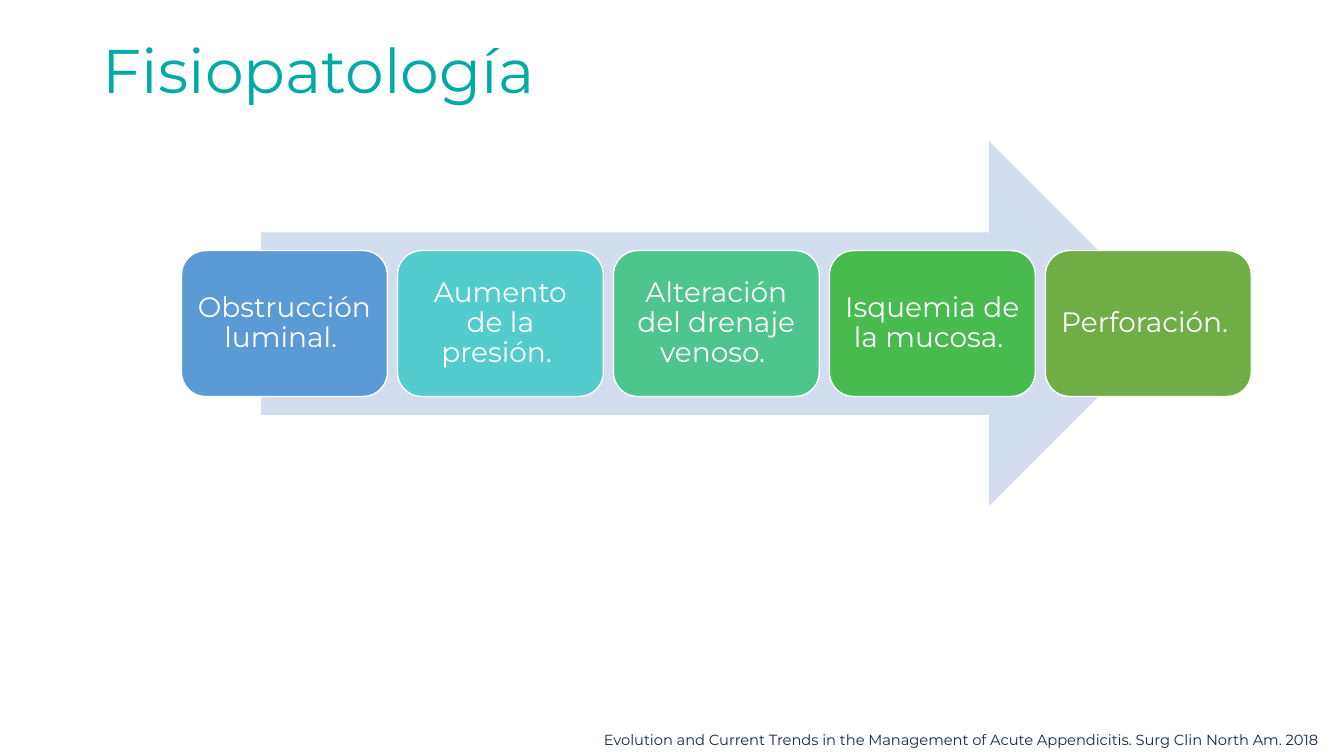
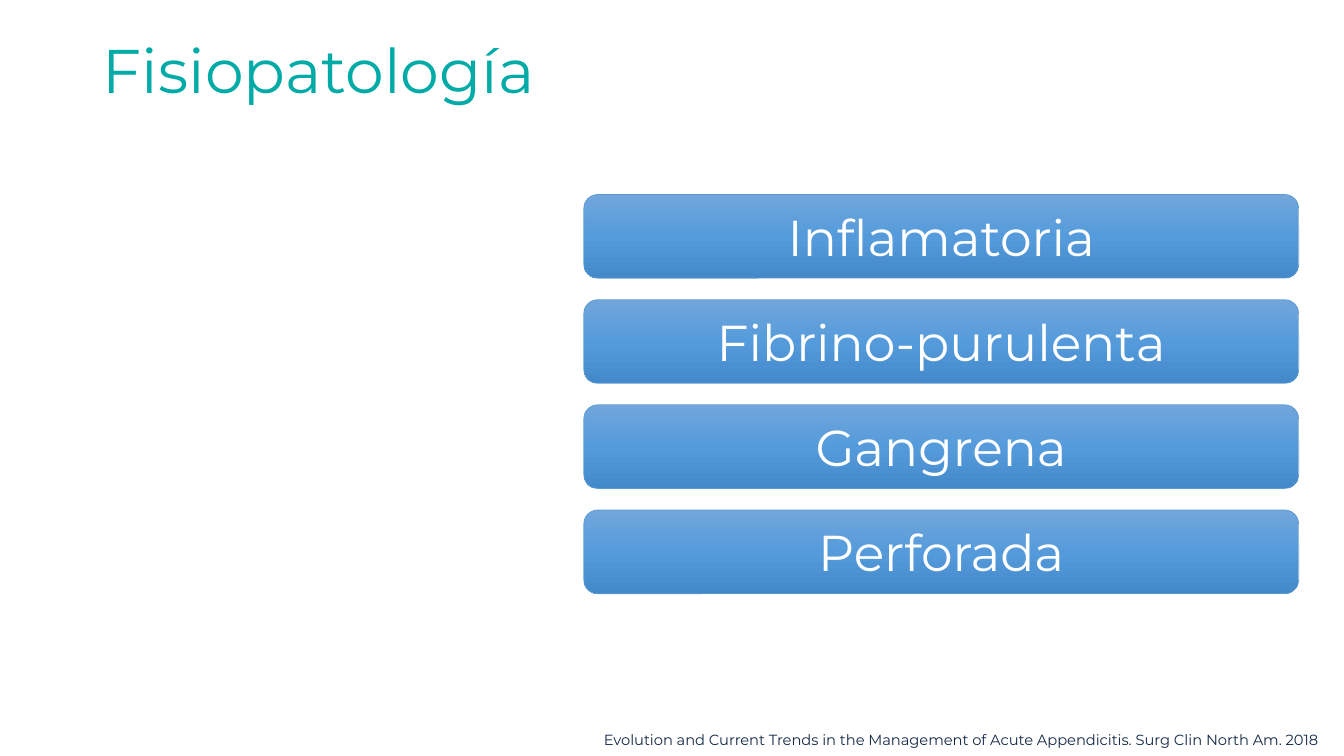
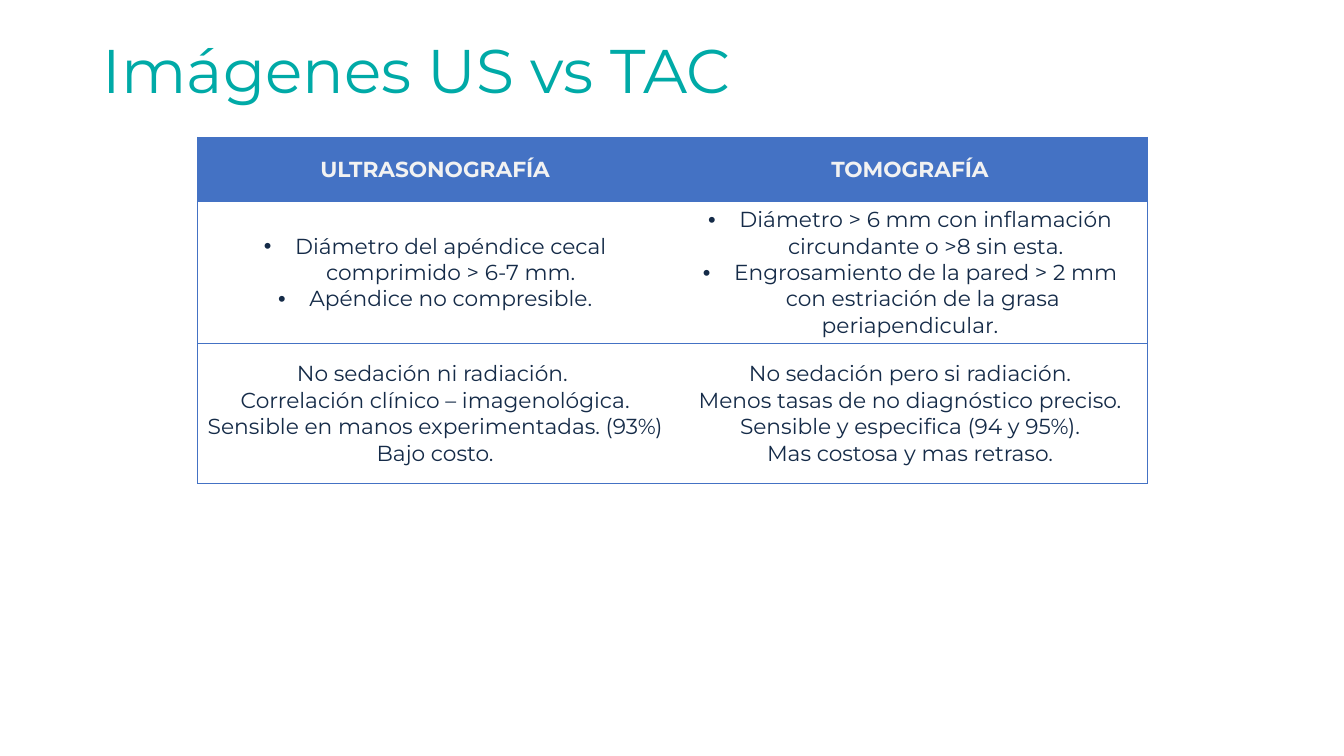
from copy import deepcopy

from lxml import etree
from pptx import Presentation
from pptx.dml.color import RGBColor
from pptx.enum.shapes import MSO_SHAPE
from pptx.enum.text import MSO_ANCHOR, MSO_AUTO_SIZE, PP_ALIGN
from pptx.oxml.ns import qn
from pptx.util import Inches, Pt

ROUNDED = MSO_SHAPE.ROUNDED_RECTANGLE
RIGHT_ARROW = MSO_SHAPE.RIGHT_ARROW
MIDDLE = MSO_ANCHOR.MIDDLE
LEFT, CENTER = PP_ALIGN.LEFT, PP_ALIGN.CENTER
NO_AUTOFIT = MSO_AUTO_SIZE.NONE
TITLE_ONLY = 5
FONT = "Montserrat"
COLORS = {
    "title": "00AAA7",
    "ink": "152B48",
    "white": "FFFFFF",
    "arrow": "D2DEEF",
    "bar_line": "5B9BD5",
    "table": "4472C4",
    "table_head": "F2F2F2",
}
BAR_GRADIENT = [(0, "71A6DB"), (0.5, "559BDB"), (1, "448ACA")]
CITATION = ("Evolution and Current Trends in the Management of Acute "
            "Appendicitis. Surg Clin North Am. 2018")
STEPS = [
    ("Obstrucción luminal. ", "5B9BD5"),
    ("Aumento de la presión. ", "54CCCD"),
    ("Alteración del drenaje venoso. ", "4DC58D"),
    ("Isquemia de la mucosa. ", "48BB4F"),
    ("Perforación. ", "70AD47"),
]
STAGES = ["Inflamatoria", "Fibrino-purulenta", "Gangrena", "Perforada"]
BULLET = "• "
COMPARISON = [
    [["ULTRASONOGRAFÍA"], ["TOMOGRAFÍA"]],
    [
        ["• Diámetro del apéndice cecal comprimido > 6-7 mm.",
         "• Apéndice no compresible."],
        ["• Diámetro > 6 mm con inflamación circundante o >8 sin esta.",
         "• Engrosamiento de la pared > 2 mm con estriación de la grasa ",
         "periapendicular."],
    ],
    [
        ["No sedación ni radiación. ",
         "Correlación clínico – imagenológica.",
         "Sensible en manos experimentadas. (93%)",
         "Bajo costo."],
        ["No sedación pero si radiación.",
         "Menos tasas de no diagnóstico preciso.",
         "Sensible y especifica (94 y 95%).",
         "Mas costosa y mas retraso."],
    ],
]


def rgb(value):
    return RGBColor.from_string(value)


def place(part, left, top, width, height):
    part.left, part.top = Inches(left), Inches(top)
    part.width, part.height = Inches(width), Inches(height)


def format_text(frame, size, color, align=LEFT, spacing=None, bold=False):
    for paragraph in frame.paragraphs:
        paragraph.alignment = align
        if spacing:
            paragraph.line_spacing = spacing
        for run in paragraph.runs:
            run.font.name = FONT
            run.font.size = Pt(size)
            run.font.bold = bold
            run.font.color.rgb = rgb(color)


def add_titled_slide(deck, heading):
    slide = deck.slides.add_slide(deck.slide_layouts[TITLE_ONLY])
    title = slide.shapes.title
    place(title, 0.92, 0, 11.5, 1.45)
    frame = title.text_frame
    frame.text = heading
    frame.auto_size = NO_AUTOFIT
    frame.vertical_anchor = MIDDLE
    format_text(frame, 44, COLORS["title"], spacing=0.9)
    return slide


def add_citation(slide):
    citation = slide.shapes.add_textbox(
        Inches(5.89), Inches(7.2), Inches(7.78), Inches(0.3))
    frame = citation.text_frame
    frame.word_wrap = True
    frame.text = CITATION
    format_text(frame, 10.5, COLORS["ink"])


def add_block(slide, preset, left, top, width, height, fill=None):
    block = slide.shapes.add_shape(
        preset, Inches(left), Inches(top), Inches(width), Inches(height))
    block.shadow.inherit = False
    block.line.fill.background()
    if fill:
        block.fill.solid()
        block.fill.fore_color.rgb = rgb(fill)
    return block


def set_outline(block, color, weight):
    block.line.color.rgb = rgb(color)
    block.line.width = Pt(weight)


def label(block, text, size, spacing=None):
    frame = block.text_frame
    frame.word_wrap = True
    frame.vertical_anchor = MIDDLE
    frame.text = text
    format_text(frame, size, COLORS["white"], CENTER, spacing)


def fill_gradient(block, stops):
    block.fill.gradient()
    block.fill.gradient_angle = 270
    stop_list = block._element.spPr.find(qn("a:gradFill")).find(qn("a:gsLst"))
    while len(stop_list) < len(stops):
        stop_list.append(deepcopy(stop_list[0]))
    for stop, (position, color) in zip(block.fill.gradient_stops, stops):
        stop.position = position
        stop.color.rgb = rgb(color)


def add_process(slide, left, top, width, height):
    add_block(slide, RIGHT_ARROW, left + 0.79, top, width - 1.58, height,
              COLORS["arrow"])
    gap = 0.1
    step_width = (width - gap * (len(STEPS) - 1)) / len(STEPS)
    step_height = height * 0.4
    step_top = top + (height - step_height) / 2
    for index, (text, color) in enumerate(STEPS):
        step = add_block(slide, ROUNDED, left + index * (step_width + gap),
                         step_top, step_width, step_height, color)
        set_outline(step, COLORS["white"], 1)
        frame = step.text_frame
        frame.margin_left = frame.margin_right = Inches(0.08)
        frame.margin_top = frame.margin_bottom = Inches(0.08)
        label(step, text, 20, 0.9)


def add_stages(slide, left, top, width, height):
    bar_height = 0.83
    pitch = (height - bar_height) / (len(STAGES) - 1)
    for index, text in enumerate(STAGES):
        bar = add_block(slide, ROUNDED, left, top + index * pitch,
                        width, bar_height)
        fill_gradient(bar, BAR_GRADIENT)
        set_outline(bar, COLORS["bar_line"], 0.5)
        label(bar, text, 36)


def set_borders(cell, visible):
    properties = cell._tc.get_or_add_tcPr()
    for side in "LRTB":
        edge = etree.SubElement(properties, qn(f"a:ln{side}"))
        edge.set("w", str(Pt(0.5)))
        if side in visible:
            paint = etree.SubElement(edge, qn("a:solidFill"))
            etree.SubElement(paint, qn("a:srgbClr")).set("val", COLORS["table"])
        else:
            etree.SubElement(edge, qn("a:noFill"))


def add_bullet(paragraph):
    properties = paragraph._p.get_or_add_pPr()
    indent = Inches(0.31)
    properties.set("marL", str(indent))
    properties.set("indent", str(-indent))
    etree.SubElement(properties, qn("a:buFont")).set("typeface", "Arial")
    etree.SubElement(properties, qn("a:buChar")).set("char", BULLET.strip())


def fill_cell(cell, lines, is_head):
    frame = cell.text_frame
    frame.text = "\n".join(line.removeprefix(BULLET) for line in lines)
    for paragraph, line in zip(frame.paragraphs, lines):
        if line.startswith(BULLET):
            add_bullet(paragraph)
    color = COLORS["table_head"] if is_head else COLORS["ink"]
    format_text(frame, 15.5, color, CENTER, bold=is_head)
    cell.vertical_anchor = MIDDLE
    if is_head:
        cell.fill.solid()
        cell.fill.fore_color.rgb = rgb(COLORS["table"])
    else:
        cell.fill.background()


def add_comparison(slide, left, top, width, height):
    head_height = 0.64
    table = slide.shapes.add_table(
        len(COMPARISON), 2, Inches(left), Inches(top),
        Inches(width), Inches(height)).table
    table.first_row = table.horz_banding = False
    body_height = (height - head_height) / (len(COMPARISON) - 1)
    for row, cells in enumerate(COMPARISON):
        table.rows[row].height = Inches(body_height if row else head_height)
        for column, lines in enumerate(cells):
            cell = table.cell(row, column)
            set_borders(cell, "TB" + "LR"[column])
            fill_cell(cell, lines, row == 0)


def main():
    deck = Presentation()
    deck.slide_width, deck.slide_height = Inches(13.33), Inches(7.5)

    process = add_titled_slide(deck, "Fisiopatología")
    add_citation(process)
    add_process(process, 1.8, 1.4, 10.61, 3.62)

    stages = add_titled_slide(deck, "Fisiopatología")
    add_stages(stages, 5.79, 1.93, 7.09, 3.96)
    add_citation(stages)

    imaging = add_titled_slide(deck, "Imágenes US vs TAC")
    add_comparison(imaging, 1.96, 1.36, 9.42, 3.42)

    deck.save("out.pptx")


if __name__ == "__main__":
    main()
